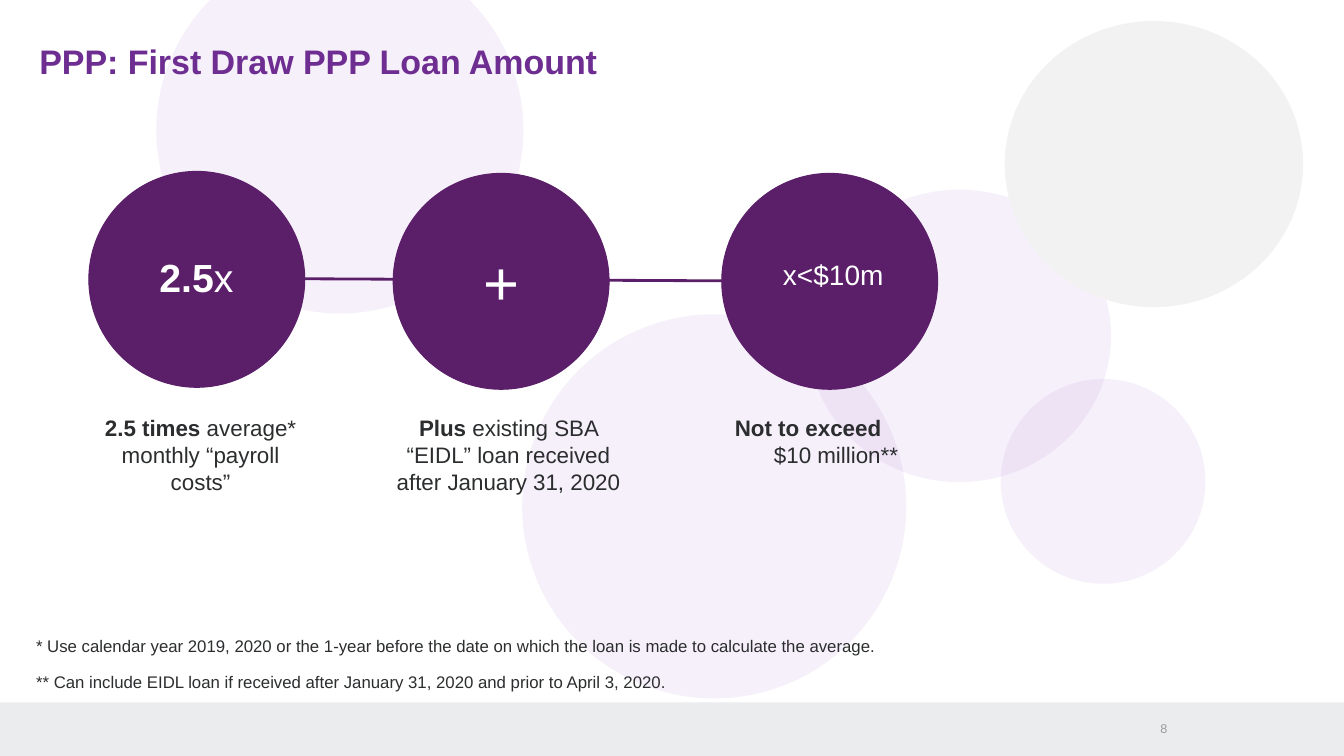
from dataclasses import dataclass
from typing import Optional

import pptx
import pptx.dml.color
import pptx.enum.shapes
import pptx.enum.text
import pptx.util
from lxml import etree
from pptx.oxml.ns import qn

Cm, Pt = pptx.util.Cm, pptx.util.Pt
SHAPE = pptx.enum.shapes.MSO_SHAPE
ALIGN = pptx.enum.text.PP_ALIGN
ANCHOR = pptx.enum.text.MSO_ANCHOR

PLUM, LILAC, TITLE, INK, WHITE = "5B1F69", "AE6CD2", "6E2D91", "2B2D2E", "FFFFFF"
DISC = 5.44

Box = tuple[float, float, float, float]


@dataclass
class Run:
    text: str
    bold: bool = False


@dataclass
class Para:
    runs: list[Run]
    align: ALIGN = ALIGN.CENTER
    indent: float = 0
    before: float = 0


@dataclass
class Bubble:
    box: Box
    fill: str = LILAC
    alpha: Optional[int] = 10


@dataclass
class Step:
    left: float
    top: float
    symbol: list[Run]
    symbol_box: Box
    symbol_size: float
    label: list[Para]
    label_box: Box


BUBBLES = [
    Bubble((3.94, -1.35, 9.25, 9.25)),
    Bubble((13.16, 7.92, 9.68, 9.68)),
    Bubble((20.35, 4.78, 7.65, 7.37)),
    Bubble((25.22, 9.55, 5.16, 5.16)),
    Bubble((25.32, 0.53, 7.52, 7.21), "F2F2F2", None),
]

STEPS = [
    Step(2.24, 4.32, [Run("2.5", True), Run("x")], (3.45, 6.38, 3, 1.19), 28,
         [Para([Run("2.5 times", True), Run(" average* monthly “payroll costs”")])],
         (2.31, 10.44, 5.49, 3.78)),
    Step(9.91, 4.37, [Run("+")], (11.13, 6.15, 3, 1.88), 44,
         [Para([Run("Plus ", True),
                Run("existing SBA “EIDL” loan received after January 31, 2020")],
               indent=0.51)],
         (9.45, 10.44, 6.22, 2.24)),
    Step(18.19, 4.37, [Run("x<$10m")], (19.02, 6.48, 3.96, 0.86), 20,
         [Para([Run("Not to exceed", True)], ALIGN.LEFT, indent=0.46),
          Para([Run("$10 million**")])],
         (18.06, 10.44, 6.02, 5)),
]

FOOTNOTES = [
    Para([Run("* Use calendar year 2019, 2020 or the 1-year before the date on which "
              "the loan is made to calculate the average.")], ALIGN.LEFT),
    Para([Run("** Can include EIDL loan if received after January 31, 2020 and prior "
              "to April 3, 2020.")], ALIGN.LEFT, before=11),
]


def rgb(color: str) -> pptx.dml.color.RGBColor:
    return pptx.dml.color.RGBColor.from_string(color)


def set_text(sp, paras: list[Para], size: float, color: str, anchor=ANCHOR.TOP) -> None:
    tf = sp.text_frame
    frame = {"word_wrap": True, "vertical_anchor": anchor,
             "auto_size": pptx.enum.text.MSO_AUTO_SIZE.NONE,
             "margin_left": 0, "margin_top": 0, "margin_right": 0, "margin_bottom": 0}
    for name, value in frame.items():
        setattr(tf, name, value)
    for i, para in enumerate(paras):
        p = tf.add_paragraph() if i else tf.paragraphs[0]
        p.alignment = para.align
        if para.before:
            p.space_before = Pt(para.before)
        if para.indent:
            pPr = p._p.get_or_add_pPr()
            pPr.set("marL", str(Cm(para.indent)))
            pPr.set("indent", "0")
        for run in para.runs:
            r = p.add_run()
            r.text = run.text
            font = {"name": "Arial", "size": Pt(size), "bold": run.bold}
            for name, value in font.items():
                setattr(r.font, name, value)
            r.font.color.rgb = rgb(color)


def add_text(s, box: Box, paras: list[Para], size: float, color: str,
             anchor=ANCHOR.TOP) -> None:
    sp = s.shapes.add_textbox(*map(Cm, box))
    set_text(sp, paras, size, color, anchor)


def add_solid(s, kind: SHAPE, box: Box, fill: str, alpha: Optional[int] = None,
              line: Optional[str] = None) -> None:
    """Add a filled shape; alpha is its opacity in percent."""
    sp = s.shapes.add_shape(kind, *map(Cm, box))
    sp.shadow.inherit = False
    sp.fill.solid()
    sp.fill.fore_color.rgb = rgb(fill)
    if alpha is not None:
        clr = sp._element.spPr.find(qn("a:solidFill")).find(qn("a:srgbClr"))
        etree.SubElement(clr, qn("a:alpha"), val=str(alpha * 1000))
    if line:
        sp.line.color.rgb = rgb(line)
        sp.line.width = Pt(0.75)
    else:
        sp.line.fill.background()


def add_link(s, start: tuple[float, float], end: tuple[float, float]) -> None:
    cn = s.shapes.add_connector(pptx.enum.shapes.MSO_CONNECTOR.STRAIGHT,
                                *map(Cm, start + end))
    cn.line.color.rgb = rgb(PLUM)
    cn.line.width = Pt(2)
    etree.SubElement(cn._element.spPr, qn("a:effectLst"))


def add_title(s, text: str) -> None:
    """Fill the title placeholder and lift it above the bubbles."""
    title = s.shapes.title
    place = {"left": 0.99, "top": 1.02, "width": 31.83, "height": 1.09}
    for name, value in place.items():
        setattr(title, name, Cm(value))
    set_text(title, [Para([Run(text, True)], ALIGN.LEFT)], 24.3, TITLE)
    s.shapes.element.append(title.element)


def main() -> None:
    prs = pptx.Presentation()
    prs.slide_width, prs.slide_height = Cm(33.87), Cm(19.05)
    s = prs.slides.add_slide(prs.slide_layouts[5])

    add_solid(s, SHAPE.RECTANGLE, (0, 17.7, 33.87, 1.35), "EBECED")
    for bubble in BUBBLES:
        add_solid(s, SHAPE.OVAL, bubble.box, bubble.fill, bubble.alpha)
    add_title(s, "PPP: First Draw PPP Loan Amount")
    add_text(s, (29.01, 18.16, 0.41, 0.41), [Para([Run("8")], ALIGN.RIGHT)], 9,
             "9A9B9C", ANCHOR.MIDDLE)

    add_link(s, (4.78, 7.01), (20.9, 7.09))
    for step in STEPS:
        add_solid(s, SHAPE.OVAL, (step.left, step.top, DISC, DISC), PLUM, line=PLUM)
        add_text(s, step.symbol_box, [Para(step.symbol)], step.symbol_size, WHITE)
        add_text(s, step.label_box, step.label, 16, INK)
    add_text(s, (0.91, 16.03, 21.77, 1.42), FOOTNOTES, 12, INK)

    prs.save("out.pptx")


if __name__ == "__main__":
    main()
